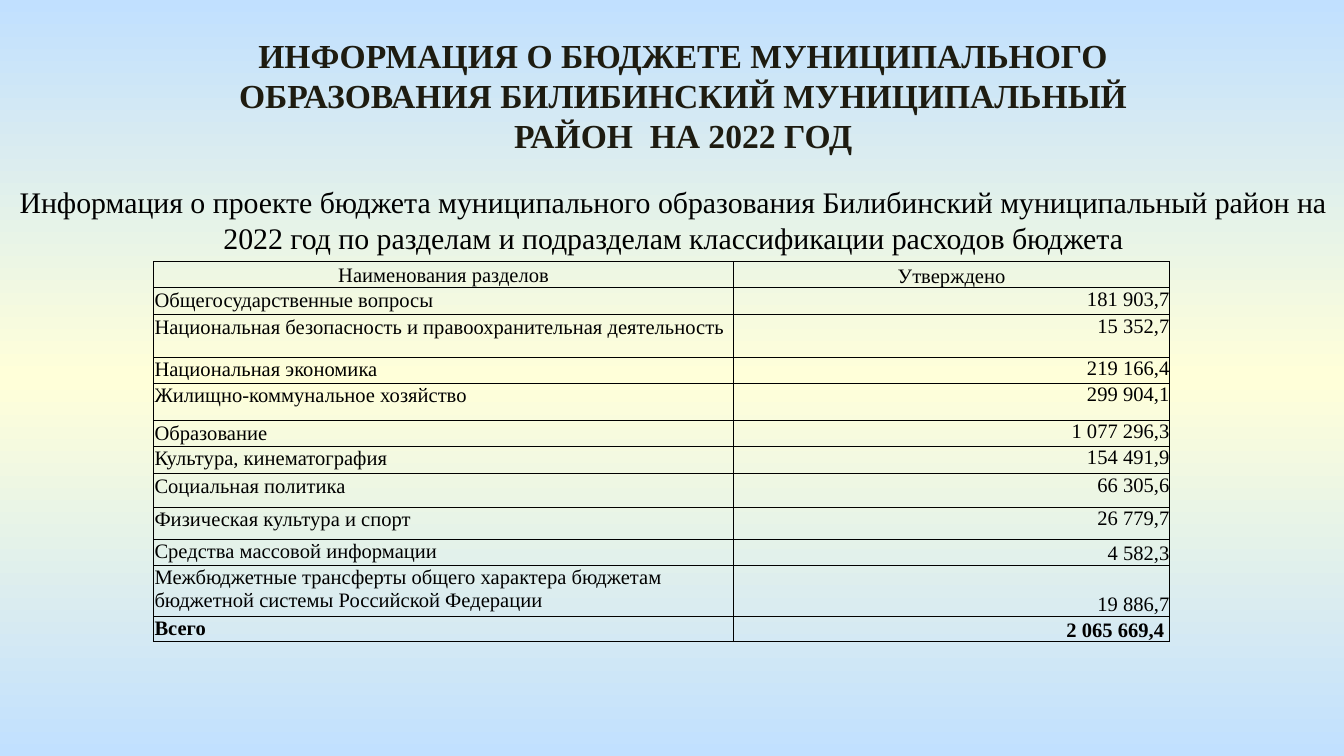
from copy import deepcopy

from lxml.etree import SubElement
from pptx import Presentation
from pptx.dml.color import RGBColor
from pptx.enum.text import MSO_ANCHOR, PP_ALIGN
from pptx.oxml.ns import qn
from pptx.util import Cm, Pt

SKY = RGBColor(0xC1, 0xE0, 0xFF)
CREAM = RGBColor(0xFF, 0xFF, 0xD9)
DARK = RGBColor(0x1E, 0x1C, 0x11)
BLACK = RGBColor(0, 0, 0)
FONT = "Times New Roman"


def write(tf, text, size, color, align, bold=False):
    tf.text = text
    tf.word_wrap = True
    p = tf.paragraphs[0]
    p.alignment = align
    font = p.runs[0].font
    font.name, font.size, font.bold = FONT, Pt(size), bold
    font.color.rgb = color


def add_borders(cell):
    tcPr = cell._tc.get_or_add_tcPr()
    for side in ("lnL", "lnR", "lnT", "lnB"):
        ln = SubElement(tcPr, qn(f"a:{side}"), w=str(Pt(0.5)))
        fill = SubElement(ln, qn("a:solidFill"))
        SubElement(fill, qn("a:srgbClr"), val=str(BLACK))


prs = Presentation()
prs.slide_width, prs.slide_height = Cm(25.4), Cm(14.29)
slide = prs.slides.add_slide(prs.slide_layouts[6])

# Background: sky, cream in the middle, sky
fill = slide.background.fill
fill.gradient()
fill.gradient_angle = 270
first_stop = slide.element.find(".//" + qn("a:gs"))
first_stop.addnext(deepcopy(first_stop))
for stop, position, color in zip(fill.gradient_stops, (0, 0.5, 1), (SKY, CREAM, SKY)):
    stop.position = position
    stop.color.rgb = color

# Title and subtitle
headings = [
    ("ИНФОРМАЦИЯ О БЮДЖЕТЕ МУНИЦИПАЛЬНОГО ОБРАЗОВАНИЯ БИЛИБИНСКИЙ "
     "МУНИЦИПАЛЬНЫЙ РАЙОН  НА 2022 ГОД",
     (3.1, 0.53, 19.63, 2.57), 18, DARK, True),
    ("Информация о проекте бюджета муниципального образования Билибинский "
     "муниципальный район на 2022 год по разделам и подразделам "
     "классификации расходов бюджета",
     (0.03, 3.35, 25.4, 1.63), 16, BLACK, False),
]
for text, box, size, color, bold in headings:
    tf = slide.shapes.add_textbox(*map(Cm, box)).text_frame
    write(tf, text, size, color, PP_ALIGN.CENTER, bold)

# Budget table: section, amount, row height in cm, anchor of the amount
TOP, BOTTOM = MSO_ANCHOR.TOP, MSO_ANCHOR.BOTTOM
rows = [
    ("Наименования разделов", "Утверждено", 0.49, BOTTOM),
    ("Общегосударственные вопросы", "181 903,7", 0.51, TOP),
    ("Национальная безопасность и правоохранительная деятельность", "15 352,7", 0.8, TOP),
    ("Национальная экономика", "219 166,4", 0.49, TOP),
    ("Жилищно-коммунальное хозяйство", "299 904,1", 0.71, TOP),
    ("Образование", "1 077 296,3", 0.48, TOP),
    ("Культура, кинематография", "154 491,9", 0.52, TOP),
    ("Социальная политика", "66 305,6", 0.63, TOP),
    ("Физическая культура и спорт", "26 779,7", 0.61, TOP),
    ("Средства массовой информации", "4 582,3", 0.48, BOTTOM),
    ("Межбюджетные трансферты общего характера бюджетам "
     "бюджетной системы Российской Федерации", "19 886,7", 0.96, BOTTOM),
    ("Всего", "2 065 669,4 ", 0.48, BOTTOM),
]
height = sum(row[2] for row in rows)
table = slide.shapes.add_table(
    len(rows), 2, Cm(2.9), Cm(4.95), Cm(19.2), Cm(height)).table
table.first_row = table.horz_banding = False
table.columns[0].width, table.columns[1].width = Cm(10.97), Cm(8.23)

for i, (section, amount, row_height, anchor) in enumerate(rows):
    table.rows[i].height = Cm(row_height)
    header, total = i == 0, i == len(rows) - 1
    for j, text in enumerate((section, amount)):
        cell = table.cell(i, j)
        inset = Cm(0.02) if header or j == 0 else 0
        cell.margin_left = cell.margin_right = cell.margin_top = inset
        cell.margin_bottom = 0
        if header:
            align = PP_ALIGN.CENTER
        else:
            align = PP_ALIGN.RIGHT if j else PP_ALIGN.LEFT
        write(cell.text_frame, text, 11, BLACK, align, total)
        if j:
            cell.vertical_anchor = anchor
        else:
            cell.vertical_anchor = MSO_ANCHOR.MIDDLE if header else TOP
        add_borders(cell)
        cell.fill.background()

prs.save("out.pptx")
